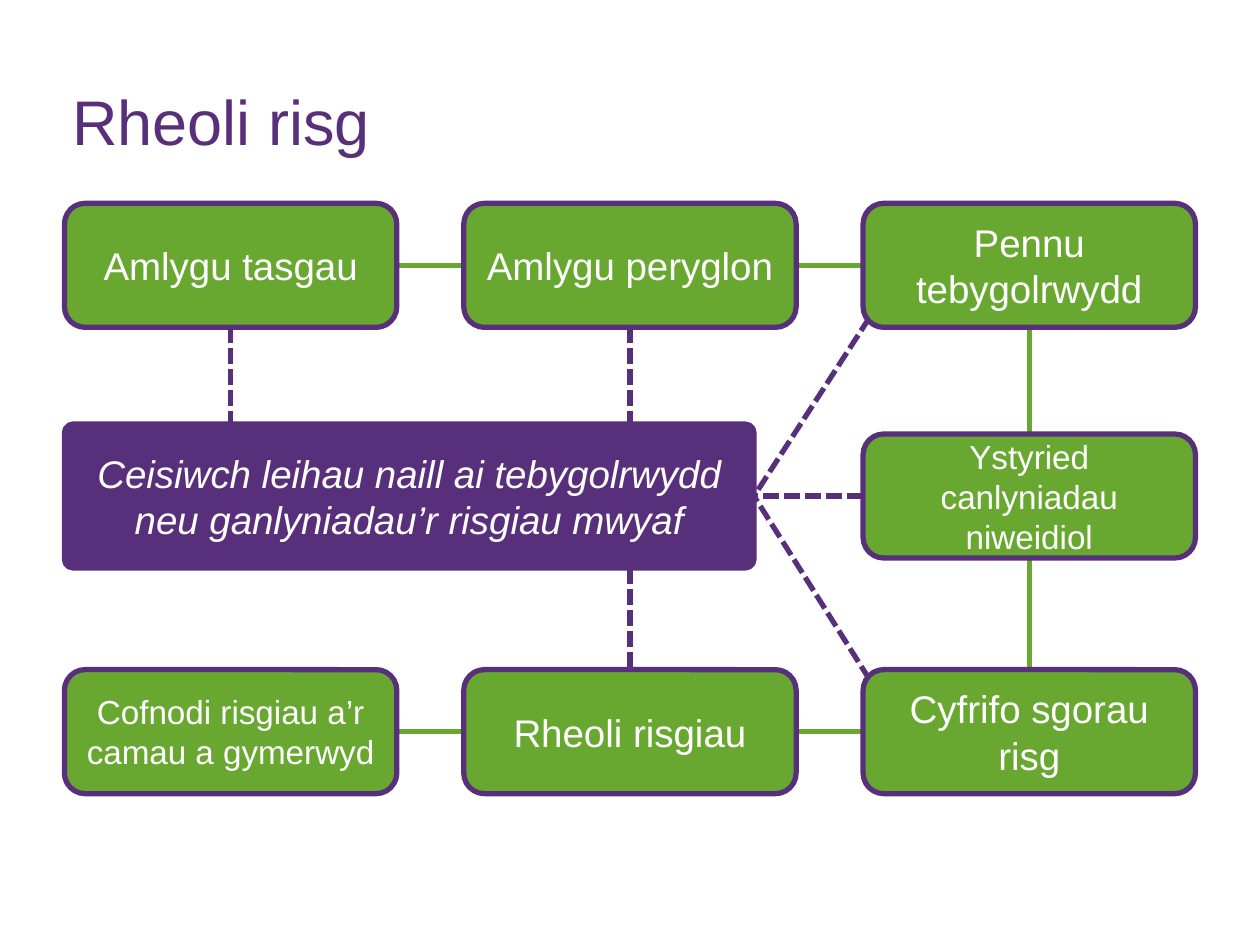
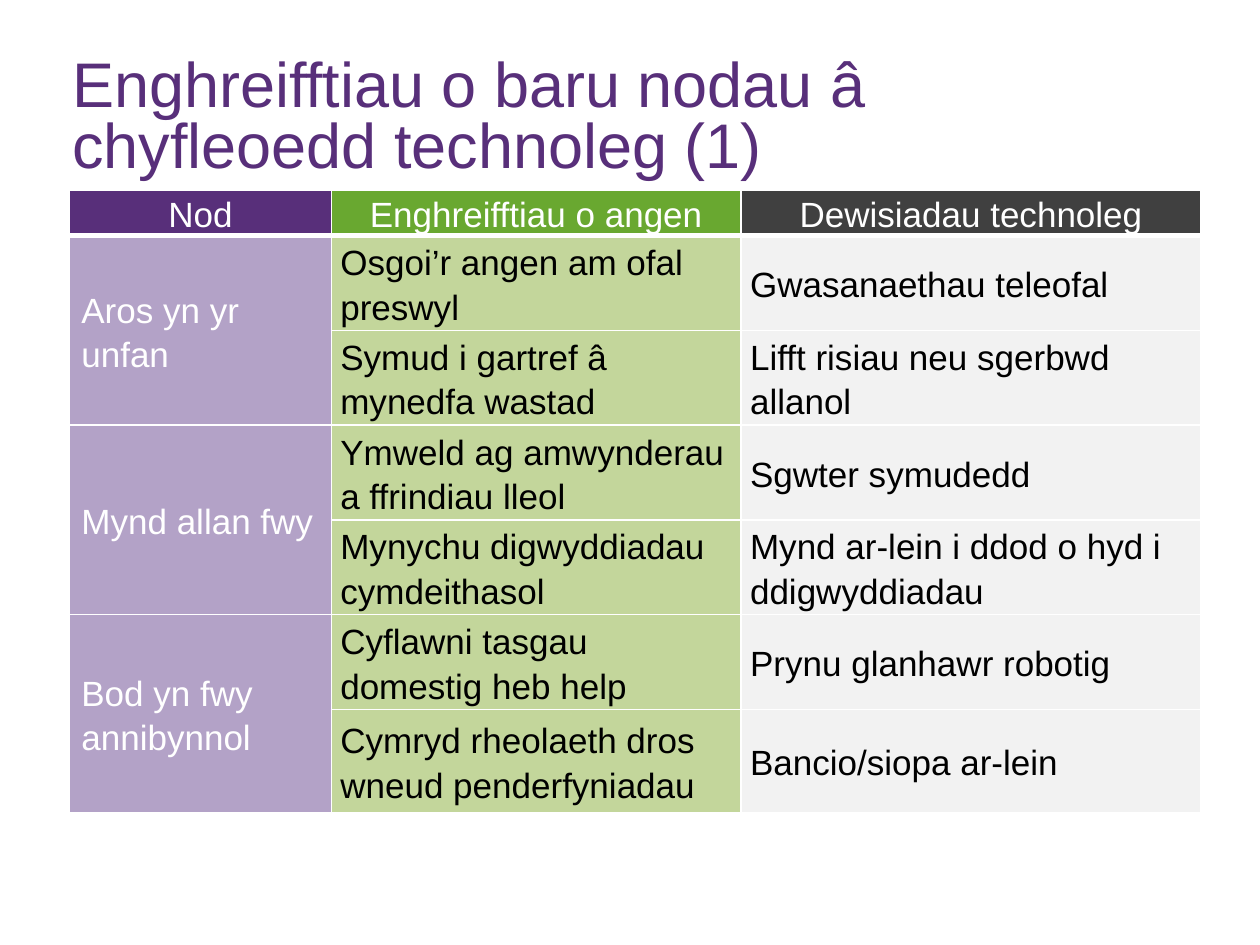
"""Builds two slides on managing risk and matching goals to technology."""
from lxml import etree
from pptx import Presentation
from pptx.dml.color import RGBColor
from pptx.enum.dml import MSO_LINE
from pptx.enum.shapes import MSO_CONNECTOR, MSO_SHAPE
from pptx.enum.text import MSO_ANCHOR, PP_ALIGN
from pptx.oxml.ns import qn
from pptx.util import Cm, Pt

PURPLE = RGBColor(0x58, 0x2F, 0x7A)
GREEN = RGBColor(0x69, 0xA8, 0x30)
CHARCOAL = RGBColor(0x40, 0x40, 0x40)
LILAC = RGBColor(0xB3, 0xA2, 0xC7)
PALE_GREEN = RGBColor(0xC3, 0xD6, 0x9B)
PALE_GREY = RGBColor(0xF2, 0xF2, 0xF2)
WHITE = RGBColor(0xFF, 0xFF, 0xFF)
BLACK = RGBColor(0, 0, 0)

FONT = "Arial"
LEFT, CENTER = PP_ALIGN.LEFT, PP_ALIGN.CENTER
TOP_ANCHOR, MIDDLE = MSO_ANCHOR.TOP, MSO_ANCHOR.MIDDLE
ROUNDED, STRAIGHT = MSO_SHAPE.ROUNDED_RECTANGLE, MSO_CONNECTOR.STRAIGHT
DASH = MSO_LINE.SQUARE_DOT
TOP, LEFT_SIDE, BOTTOM, RIGHT_SIDE = range(4)

BOX_W, BOX_H = 6.7, 2.5
COLUMNS = [1.3 + 8.05 * i for i in range(3)]
ROWS = [4.1, 8.75, 13.5]

HEADERS = ["Nod", "Enghreifftiau o angen", "Dewisiadau technoleg"]
GOALS = [
    ("Aros yn yr unfan", [
        ("Osgoi’r angen am ofal preswyl", "Gwasanaethau teleofal"),
        ("Symud i gartref â mynedfa wastad", "Lifft risiau neu sgerbwd allanol")]),
    ("Mynd allan fwy", [
        ("Ymweld ag amwynderau a ffrindiau lleol", "Sgwter symudedd"),
        ("Mynychu digwyddiadau cymdeithasol",
         "Mynd ar-lein i ddod o hyd i ddigwyddiadau")]),
    ("Bod yn fwy annibynnol", [
        ("Cyflawni tasgau domestig heb help", "Prynu glanhawr robotig"),
        ("Cymryd rheolaeth dros wneud penderfyniadau", "Bancio/siopa ar-lein")]),
]


class Deck:
    """Holds the shared style and the current slide."""

    def __init__(self):
        self.prs = Presentation()
        self.prs.slide_width, self.prs.slide_height = Cm(25.4), Cm(19.05)
        self.s = None

    def put_text(self, tf, text, size, color, align, spacing=1.0, italic=False):
        tf.text = text
        p = tf.paragraphs[0]
        p.alignment, p.line_spacing = align, spacing
        font = p.runs[0].font
        font.name, font.size, font.color.rgb = FONT, Pt(size), color
        font.bold, font.italic = False, italic

    def slide(self, title, spacing=1.0):
        self.s = self.prs.slides.add_slide(self.prs.slide_layouts[5])
        sp = self.s.shapes.title
        sp.left, sp.top, sp.width, sp.height = Cm(1.2), Cm(1.02), Cm(23), Cm(2.8)
        tf = sp.text_frame
        tf.vertical_anchor, tf.margin_right = MIDDLE, Cm(0.5)
        self.put_text(tf, title, 36, PURPLE, LEFT, spacing)

    def box(self, text, x, y, w=BOX_W, h=BOX_H, size=22, fill=GREEN, italic=False):
        sp = self.s.shapes.add_shape(ROUNDED, Cm(x), Cm(y), Cm(w), Cm(h))
        sp.shadow.inherit = False
        sp.fill.solid()
        sp.fill.fore_color.rgb = fill
        sp.line.color.rgb, sp.line.width = PURPLE, Pt(3)
        tf = sp.text_frame
        tf.word_wrap, tf.vertical_anchor = True, MIDDLE
        self.put_text(tf, text, size, WHITE, CENTER, italic=italic)
        return sp

    def line(self, start, end, color=GREEN, dash=None):
        """Draw behind the boxes; each end is a (shape, side) pair or a point in cm."""
        c = self.s.shapes.add_connector(STRAIGHT, 0, 0, 0, 0)
        if isinstance(start[0], float):
            c.begin_x, c.begin_y = Cm(start[0]), Cm(start[1])
        else:
            c.begin_connect(*start)
        if isinstance(end[0], float):
            c.end_x, c.end_y = Cm(end[0]), Cm(end[1])
        else:
            c.end_connect(*end)
        c.line.color.rgb, c.line.width, c.line.dash_style = color, Pt(3), dash
        element = c._element
        etree.SubElement(element.spPr, qn("a:effectLst"))
        element.getparent().insert(2, element)

    def table(self, x, y, widths, heights):
        frame = self.s.shapes.add_table(
            len(heights), len(widths), Cm(x), Cm(y), Cm(sum(widths)), Cm(sum(heights)))
        table = frame.table
        table.horz_banding = False
        for column, width in zip(table.columns, widths):
            column.width = Cm(width)
        for row, height in zip(table.rows, heights):
            row.height = Cm(height)
        return table

    def cell(self, cell, text, fill, color=BLACK, align=LEFT, anchor=MIDDLE,
             margin=0.18, bottom=1):
        self.borders(cell, bottom)
        cell.fill.solid()
        cell.fill.fore_color.rgb = fill
        cell.margin_left, cell.margin_right = Cm(margin), Cm(0.18)
        cell.margin_top = cell.margin_bottom = 0
        cell.vertical_anchor = anchor
        if text:
            self.put_text(cell.text_frame, text, 20, color, align, 1.14)

    def borders(self, cell, bottom):
        tc_pr = cell._tc.get_or_add_tcPr()
        for tag, width in (("lnL", 1), ("lnR", 1), ("lnT", 1), ("lnB", bottom)):
            ln = etree.SubElement(tc_pr, qn(f"a:{tag}"), w=str(Pt(width)))
            fill = etree.SubElement(ln, qn("a:solidFill"))
            etree.SubElement(fill, qn("a:srgbClr"), val=str(WHITE))


def risk_slide(deck):
    deck.slide("Rheoli risg")
    x1, x2, x3 = COLUMNS
    y1, y2, y3 = ROWS
    reduce = deck.box(
        "Ceisiwch leihau naill ai tebygolrwydd neu ganlyniadau’r risgiau mwyaf",
        1.3, 8.55, 13.9, 2.9, fill=PURPLE, italic=True)
    reduce.adjustments[0] = 0.06
    tasks = deck.box("Amlygu tasgau", x1, y1)
    hazards = deck.box("Amlygu peryglon", x2, y1)
    likelihood = deck.box("Pennu tebygolrwydd", x3, y1)
    harm = deck.box("Ystyried canlyniadau niweidiol", x3, y2, size=19)
    scores = deck.box("Cyfrifo sgorau risg", x3, y3)
    manage = deck.box("Rheoli risgiau", x2, y3)
    record = deck.box("Cofnodi risgiau a’r camau a gymerwyd", x1, y3, size=19)

    for left, right in ((tasks, hazards), (hazards, likelihood),
                        (record, manage), (manage, scores)):
        deck.line((left, RIGHT_SIDE), (right, LEFT_SIDE))
    for upper, lower in ((likelihood, harm), (harm, scores)):
        deck.line((upper, BOTTOM), (lower, TOP))

    middle1, middle2 = x1 + BOX_W / 2, x2 + BOX_W / 2
    corner = x3 + 0.13
    for start, end in (
            ((tasks, BOTTOM), (middle1, 8.6)),
            ((hazards, BOTTOM), (middle2, 8.6)),
            ((middle2, 11.45), (manage, TOP)),
            ((corner, y1 + BOX_H - 0.2), (reduce, RIGHT_SIDE)),
            ((harm, LEFT_SIDE), (reduce, RIGHT_SIDE)),
            ((corner, y3 + 0.2), (reduce, RIGHT_SIDE))):
        deck.line(start, end, PURPLE, DASH)


def technology_slide(deck):
    deck.slide("Enghreifftiau o baru nodau â chyfleoedd technoleg (1)", 0.8)
    table = deck.table(1.4, 3.84, [5.28, 8.26, 9.27], [0.91] + [1.91] * 5 + [2.08])
    for col, (text, fill) in enumerate(zip(HEADERS, (PURPLE, GREEN, CHARCOAL))):
        deck.cell(table.cell(0, col), text, fill, WHITE, CENTER, TOP_ANCHOR, bottom=3)
    for i, (goal, pairs) in enumerate(GOALS):
        first = 1 + 2 * i
        table.cell(first, 0).merge(table.cell(first + 1, 0))
        for row, (need, choice) in enumerate(pairs, first):
            deck.cell(table.cell(row, 0), goal if row == first else "", LILAC, WHITE,
                      margin=0.24)
            deck.cell(table.cell(row, 1), need, PALE_GREEN)
            deck.cell(table.cell(row, 2), choice, PALE_GREY)


def main():
    deck = Deck()
    risk_slide(deck)
    technology_slide(deck)
    deck.prs.save("out.pptx")


if __name__ == "__main__":
    main()
